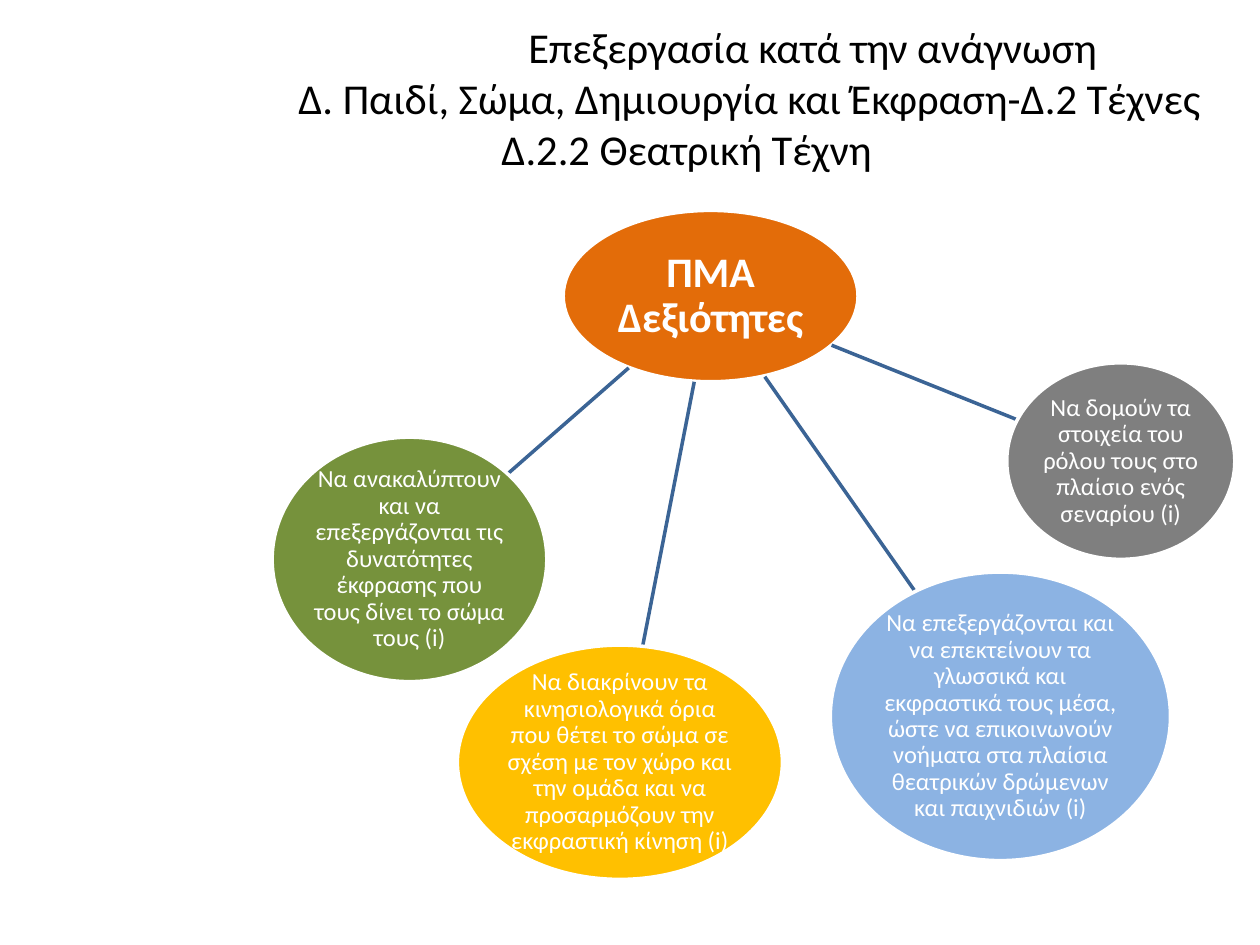
from dataclasses import dataclass

from lxml.etree import SubElement
from pptx import Presentation
from pptx.dml.color import RGBColor
from pptx.enum.shapes import MSO_CONNECTOR, MSO_SHAPE
from pptx.enum.text import MSO_ANCHOR, MSO_AUTO_SIZE, PP_ALIGN
from pptx.oxml.ns import qn
from pptx.util import Inches, Pt


@dataclass(frozen=True)
class Theme:
    font: str = "Calibri"
    title_size: float = 24.3
    center_size: int = 24
    skill_size: int = 14
    line_width: int = 2
    black: RGBColor = RGBColor(0x00, 0x00, 0x00)
    white: RGBColor = RGBColor(0xFF, 0xFF, 0xFF)
    connector: RGBColor = RGBColor(0x3B, 0x64, 0x95)
    orange: RGBColor = RGBColor(0xE3, 0x6C, 0x09)
    green: RGBColor = RGBColor(0x76, 0x92, 0x3C)
    blue: RGBColor = RGBColor(0x8C, 0xB3, 0xE3)
    gray: RGBColor = RGBColor(0x7F, 0x7F, 0x7F)
    yellow: RGBColor = RGBColor(0xFF, 0xC0, 0x00)


THEME = Theme()

# Title lines with the left indent that shifts each centred line
TITLE_LINES = [
    ("Επεξεργασία κατά την ανάγνωση", 2),
    ("Δ. Παιδί, Σώμα, Δημιουργία και Έκφραση-Δ.2 Τέχνες", 1),
    ("Δ.2.2 Θεατρική Τέχνη", 0),
]

CENTER_BOX = (4.47, 1.67, 2.34, 1.36)

# Ellipse box, fill, spoke (from x, y, to x, y), wording
SKILLS = [
    ((2.16, 3.47, 2.18, 1.94), THEME.green, (4.99, 2.92, 4.03, 3.76),
     "Να ανακαλύπτουν και να επεξεργάζονται τις δυνατότητες έκφρασης "
     "που τους δίνει το σώμα τους (i)"),
    ((6.59, 4.54, 2.7, 2.29), THEME.blue, (6.07, 2.99, 7.26, 4.69),
     "Να επεξεργάζονται και να επεκτείνουν τα γλωσσικά και εκφραστικά "
     "τους μέσα, ώστε να επικοινωνούν νοήματα στα πλαίσια θεατρικών "
     "δρώμενων και παιχνιδιών (i)"),
    ((7.99, 2.88, 1.81, 1.56), THEME.gray, (6.6, 2.74, 8.07, 3.33),
     "Να δομούν τα στοιχεία του ρόλου τους στο πλαίσιο ενός σεναρίου (i)"),
    ((3.63, 5.12, 2.58, 1.86), THEME.yellow, (5.51, 3.03, 5.1, 5.13),
     "Να διακρίνουν τα κινησιολογικά όρια που θέτει το σώμα σε σχέση με "
     "τον χώρο και την ομάδα και να προσαρμόζουν την εκφραστική κίνηση (i)"),
]


def add_run(paragraph, text, size, color, bold=False):
    run = paragraph.add_run()
    run.text = text
    run.font.name = THEME.font
    run.font.size = Pt(size)
    run.font.bold = bold
    run.font.color.rgb = color


def fill_title(title):
    title.left, title.top = Inches(0.95), Inches(0.15)
    title.width, title.height = Inches(9), Inches(1.25)
    frame = title.text_frame
    frame.auto_size = MSO_AUTO_SIZE.NONE
    frame.vertical_anchor = MSO_ANCHOR.MIDDLE
    for index, (text, indent) in enumerate(TITLE_LINES):
        paragraph = frame.add_paragraph() if index else frame.paragraphs[0]
        paragraph.alignment = PP_ALIGN.CENTER
        paragraph._p.get_or_add_pPr().set("marL", str(Inches(indent)))
        add_run(paragraph, text, THEME.title_size, THEME.black)


def add_ellipse(slide, box, fill, text, size, inset, bold=False):
    shape = slide.shapes.add_shape(MSO_SHAPE.OVAL, *map(Inches, box))
    shape.shadow.inherit = False
    shape.fill.solid()
    shape.fill.fore_color.rgb = fill
    shape.line.color.rgb = THEME.white
    shape.line.width = Pt(THEME.line_width)
    frame = shape.text_frame
    frame.word_wrap = True
    frame.vertical_anchor = MSO_ANCHOR.MIDDLE
    frame.margin_left = frame.margin_right = Inches(inset)
    frame.margin_top = frame.margin_bottom = Inches(inset)
    paragraph = frame.paragraphs[0]
    paragraph.alignment = PP_ALIGN.CENTER
    paragraph.line_spacing = 0.9
    add_run(paragraph, text, size, THEME.white, bold)


def add_spoke(slide, ends):
    connector = slide.shapes.add_connector(
        MSO_CONNECTOR.STRAIGHT, *map(Inches, ends))
    connector.line.color.rgb = THEME.connector
    connector.line.width = Pt(THEME.line_width)
    SubElement(connector._element.spPr, qn("a:effectLst"))


def main():
    presentation = Presentation()
    presentation.slide_width = Inches(10)
    presentation.slide_height = Inches(7.5)
    slide = presentation.slides.add_slide(presentation.slide_layouts[5])
    fill_title(slide.shapes.title)
    add_ellipse(slide, CENTER_BOX, THEME.orange, "ΠΜΑ Δεξιότητες",
                THEME.center_size, 0.02, bold=True)
    for box, fill, spoke, text in SKILLS:
        add_spoke(slide, spoke)
        add_ellipse(slide, box, fill, text, THEME.skill_size, 0.01)
    presentation.save("out.pptx")


if __name__ == "__main__":
    main()
